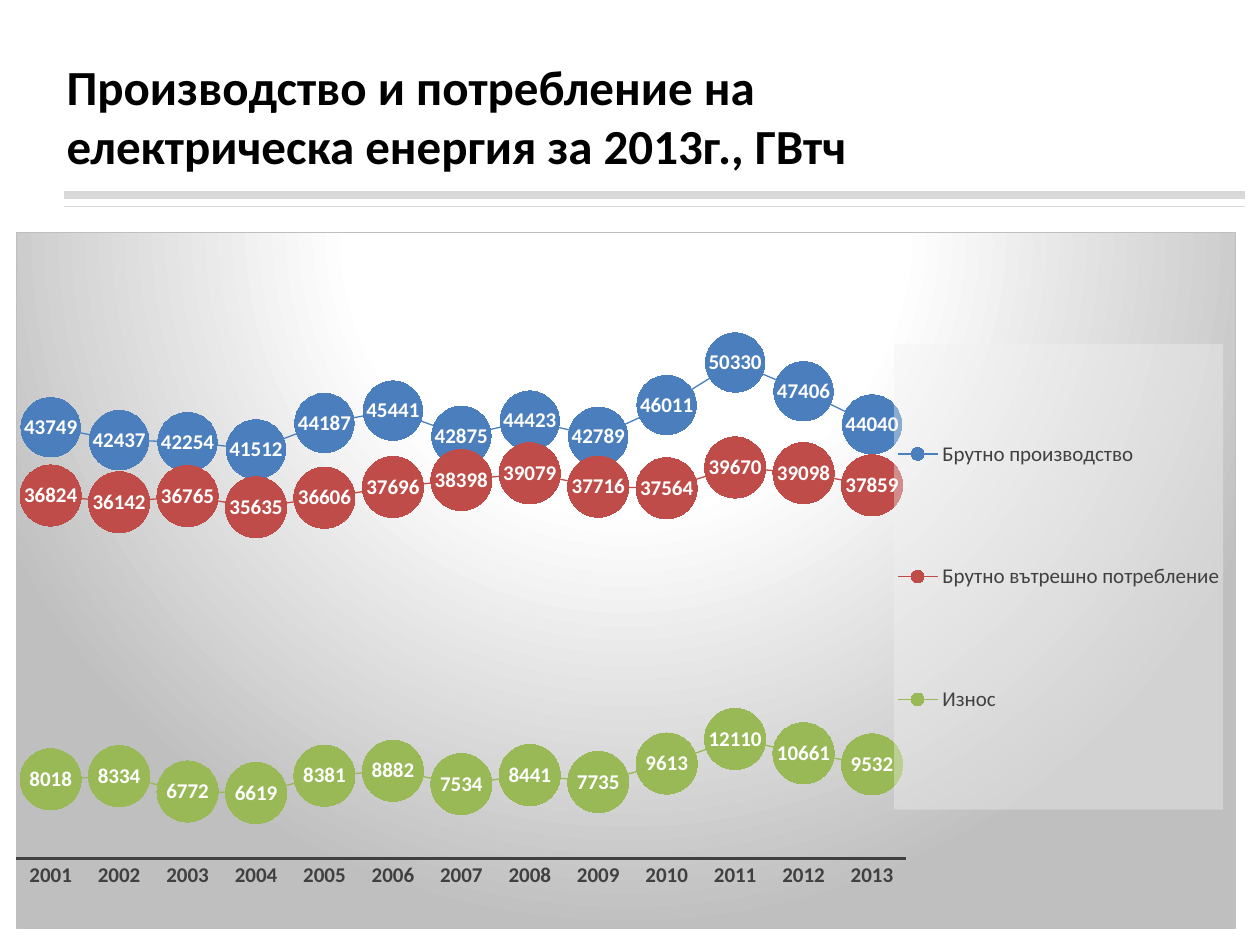
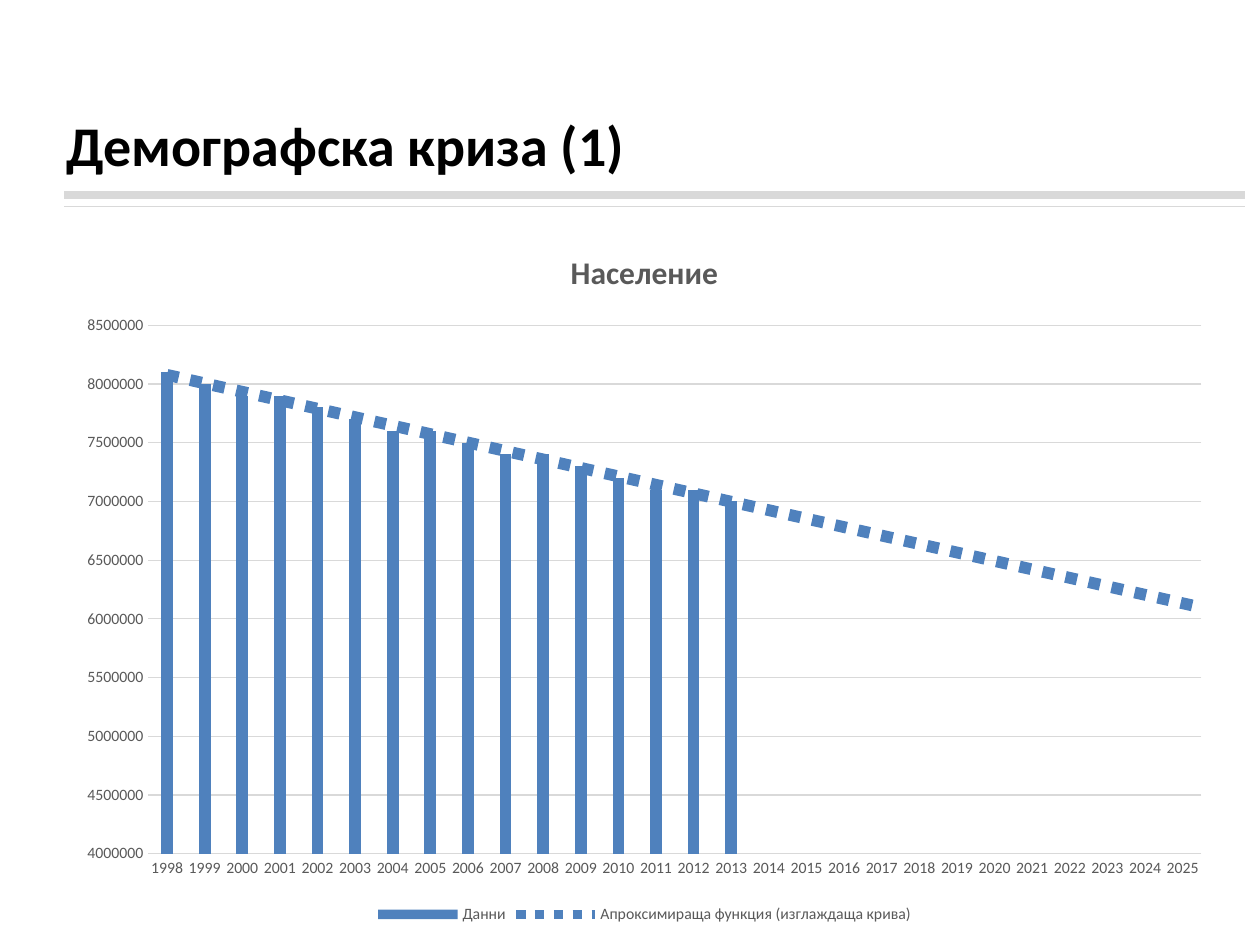
from dataclasses import dataclass

from lxml.etree import SubElement
from pptx import Presentation
from pptx.chart.axis import CategoryAxis
from pptx.chart.chart import Chart
from pptx.chart.data import CategoryChartData
from pptx.dml.color import RGBColor
from pptx.enum.chart import (XL_CHART_TYPE, XL_LABEL_POSITION, XL_LEGEND_POSITION,
                             XL_MARKER_STYLE, XL_TICK_MARK)
from pptx.enum.shapes import MSO_CONNECTOR
from pptx.enum.text import MSO_ANCHOR
from pptx.oxml import parse_xml
from pptx.oxml.ns import nsdecls, qn
from pptx.slide import Slide
from pptx.text.text import Font
from pptx.util import Inches, Length, Pt

COLUMNS, ROWS = 100, 75
SLIDE_WIDTH, SLIDE_HEIGHT = Inches(10), Inches(7.5)
FONT = "Calibri"
BLACK, WHITE = "000000", "FFFFFF"
DARK_GREY, MID_GREY, SILVER, PALE_GREY = "404040", "595959", "BFBFBF", "D9D9D9"
BLUE = "4F81BD"


@dataclass(frozen=True)
class Area:
    """A block of cells on the slide grid."""
    column: float
    row: float
    columns: float
    rows: float

    def lengths(self) -> tuple[Length, Length, Length, Length]:
        return x(self.column), y(self.row), x(self.columns), y(self.rows)


@dataclass(frozen=True)
class Heading:
    text: str
    area: Area
    size: float
    anchor: MSO_ANCHOR


@dataclass(frozen=True)
class Rule:
    row: float
    weight: float


@dataclass(frozen=True)
class EnergyFlow:
    name: str
    color: str
    marker_size: int
    gwh: tuple[int, ...]


RULES = (Rule(15.5, 4.5), Rule(16.4, 0.25))
RULE_START, RULE_END = 5.1, 98.8

ENERGY_HEADING = Heading("Производство и потребление на електрическа енергия за 2013г., ГВтч",
                         Area(4.3, 5.2, 70.2, 7.9), 28, MSO_ANCHOR.MIDDLE)
ENERGY_AREA = Area(1.2, 18.4, 96.9, 55.3)
ENERGY_YEARS = range(2001, 2014)
ENERGY_FLOWS = (
    EnergyFlow("Брутно производство", "4B7EBC", 34,
               (43749, 42437, 42254, 41512, 44187, 45441, 42875, 44423, 42789,
                46011, 50330, 47406, 44040)),
    EnergyFlow("Брутно вътрешно потребление", "BF4C48", 35,
               (36824, 36142, 36765, 35635, 36606, 37696, 38398, 39079, 37716,
                37564, 39670, 39098, 37859)),
    EnergyFlow("Износ", "98B955", 35,
               (8018, 8334, 6772, 6619, 8381, 8882, 7534, 8441, 7735,
                9613, 12110, 10661, 9532)),
)

CRISIS_HEADING = Heading("Демографска криза (1)", Area(4.3, 3.6, 57.3, 11), 32,
                         MSO_ANCHOR.BOTTOM)
POPULATION_AREA = Area(5.1, 17.8, 92.1, 55.9)
POPULATION_YEARS = range(1998, 2026)
POPULATION_MILLIONS = (8.1, 8.0, 7.9, 7.9, 7.8, 7.7, 7.6, 7.6,
                       7.5, 7.4, 7.4, 7.3, 7.2, 7.1, 7.1, 7.0)


def x(columns: float) -> Length:
    return Length(round(SLIDE_WIDTH * columns / COLUMNS))


def y(rows: float) -> Length:
    return Length(round(SLIDE_HEIGHT * rows / ROWS))


def rgb(color: str) -> RGBColor:
    return RGBColor.from_string(color)


def style_font(font: Font, size: float, color: str, bold: bool = False) -> None:
    font.name, font.size, font.bold = FONT, Pt(size), bold
    font.color.rgb = rgb(color)


def style_line(line, color: str, weight: float) -> None:
    line.color.rgb = rgb(color)
    line.width = Pt(weight)


def add_headed_slide(deck: Presentation, heading: Heading) -> Slide:
    """Add a blank slide with the double rule and its heading."""
    slide = deck.slides.add_slide(deck.slide_layouts[6])
    for rule in RULES:
        stroke = slide.shapes.add_connector(MSO_CONNECTOR.STRAIGHT, x(RULE_START), y(rule.row),
                                            x(RULE_END), y(rule.row))
        style_line(stroke.line, PALE_GREY, rule.weight)
        SubElement(stroke._element.spPr, qn("a:effectLst"))
    frame = slide.shapes.add_textbox(*heading.area.lengths()).text_frame
    frame.word_wrap = True
    frame.vertical_anchor = heading.anchor
    frame.text = heading.text
    style_font(frame.paragraphs[0].runs[0].font, heading.size, BLACK, bold=True)
    return slide


def add_chart(slide: Slide, kind: XL_CHART_TYPE, area: Area, data: CategoryChartData) -> Chart:
    chart = slide.shapes.add_chart(kind, *area.lengths(), data).chart
    style_font(chart.font, 10, BLACK)
    chart.plots[0].vary_by_categories = False
    return chart


def style_years(axis: CategoryAxis, size: float, color: str, line_color: str,
                weight: float, bold: bool = False) -> None:
    axis.major_tick_mark = axis.minor_tick_mark = XL_TICK_MARK.NONE
    style_font(axis.tick_labels.font, size, color, bold)
    style_line(axis.format.line, line_color, weight)


def add_legend(chart: Chart, position: XL_LEGEND_POSITION, size: float, color: str) -> None:
    chart.has_legend = True
    chart.legend.position = position
    chart.legend.include_in_layout = False
    style_font(chart.legend.font, size, color)


def manual_layout(left: float, top: float, width: float, height: float, inner: bool = False):
    """Place a chart part by shares of the chart's size."""
    target = '<c:layoutTarget val="inner"/>' if inner else ""
    return parse_xml(
        f'<c:layout {nsdecls("c")}><c:manualLayout>{target}'
        '<c:xMode val="edge"/><c:yMode val="edge"/>'
        f'<c:x val="{left}"/><c:y val="{top}"/><c:w val="{width}"/><c:h val="{height}"/>'
        '</c:manualLayout></c:layout>')


def drop_layout(part) -> None:
    for layout in part.findall(qn("c:layout")):
        part.remove(layout)


def paint_energy_background(chart: Chart) -> None:
    stops = "".join(f'<a:gs pos="{share * 1000}"><a:srgbClr val="{color}"/></a:gs>'
                    for share, color in ((0, WHITE), (39, WHITE), (100, SILVER)))
    chart.element.find(qn("c:chart")).addnext(parse_xml(
        f'<c:spPr {nsdecls("c", "a")}><a:gradFill><a:gsLst>{stops}</a:gsLst>'
        '<a:path path="circle"><a:fillToRect l="50000" t="-80000" r="50000" b="180000"/></a:path>'
        f'</a:gradFill><a:ln w="{Pt(0.75)}"><a:solidFill><a:srgbClr val="{SILVER}"/></a:solidFill>'
        '</a:ln></c:spPr>'))


def place_energy_parts(chart: Chart) -> None:
    """Fix the plot on the left and a translucent legend panel on the right."""
    plot_area = chart.element.find(".//" + qn("c:plotArea"))
    drop_layout(plot_area)
    plot_area.insert(0, manual_layout(0, 0.05, 0.73, 0.85, inner=True))
    legend = chart.element.find(".//" + qn("c:legend"))
    drop_layout(legend)
    overlay = legend.find(qn("c:overlay"))
    overlay.addprevious(manual_layout(0.72, 0.16, 0.27, 0.67))
    overlay.addnext(parse_xml(
        f'<c:spPr {nsdecls("c", "a")}><a:solidFill><a:srgbClr val="F2F2F2">'
        '<a:alpha val="39000"/></a:srgbClr></a:solidFill></c:spPr>'))


def build_energy_slide(deck: Presentation) -> None:
    slide = add_headed_slide(deck, ENERGY_HEADING)
    data = CategoryChartData()
    data.categories = [str(year) for year in ENERGY_YEARS]
    for flow in ENERGY_FLOWS:
        data.add_series(flow.name, flow.gwh)
    chart = add_chart(slide, XL_CHART_TYPE.LINE_MARKERS, ENERGY_AREA, data)
    chart.has_title = False
    style_years(chart.category_axis, 12, DARK_GREY, DARK_GREY, 1.5, bold=True)
    chart.value_axis.visible = False
    chart.value_axis.has_major_gridlines = False
    chart.value_axis.minimum_scale, chart.value_axis.maximum_scale = 0, 60000
    for flow, series in zip(ENERGY_FLOWS, chart.plots[0].series):
        series.smooth = False
        style_line(series.format.line, flow.color, 0.75)
        series.marker.style = XL_MARKER_STYLE.CIRCLE
        series.marker.size = flow.marker_size
        series.marker.format.fill.solid()
        series.marker.format.fill.fore_color.rgb = rgb(flow.color)
        series.marker.format.line.fill.background()
        labels = series.data_labels
        labels.show_value = True
        labels.position = XL_LABEL_POSITION.CENTER
        style_font(labels.font, 12, WHITE, bold=True)
    add_legend(chart, XL_LEGEND_POSITION.RIGHT, 12, DARK_GREY)
    paint_energy_background(chart)
    place_energy_parts(chart)


def add_population_trend(chart: Chart, years_ahead: int) -> None:
    chart.element.find(".//" + qn("c:cat")).addprevious(parse_xml(
        f'<c:trendline {nsdecls("c", "a")}>'
        '<c:name>Апроксимираща функция (изглаждаща крива)</c:name>'
        f'<c:spPr><a:ln w="{Pt(6.75)}"><a:solidFill><a:srgbClr val="{BLUE}"/></a:solidFill>'
        '<a:prstDash val="sysDot"/></a:ln></c:spPr><c:trendlineType val="linear"/>'
        f'<c:forward val="{years_ahead}"/><c:dispRSqr val="0"/><c:dispEq val="0"/>'
        '</c:trendline>'))


def build_population_slide(deck: Presentation) -> None:
    slide = add_headed_slide(deck, CRISIS_HEADING)
    years_ahead = len(POPULATION_YEARS) - len(POPULATION_MILLIONS)
    data = CategoryChartData()
    data.categories = [str(year) for year in POPULATION_YEARS]
    people = [round(millions * 1_000_000) for millions in POPULATION_MILLIONS]
    data.add_series("Данни", people + [None] * years_ahead)
    chart = add_chart(slide, XL_CHART_TYPE.COLUMN_CLUSTERED, POPULATION_AREA, data)
    chart.has_title = True
    title = chart.chart_title.text_frame
    title.text = "Население"
    style_font(title.paragraphs[0].runs[0].font, 18, MID_GREY, bold=True)
    style_years(chart.category_axis, 9, MID_GREY, PALE_GREY, 0.75)
    scale = chart.value_axis
    scale.minimum_scale, scale.maximum_scale = 4_000_000, 8_500_000
    scale.major_unit = 500_000
    scale.major_tick_mark = scale.minor_tick_mark = XL_TICK_MARK.NONE
    style_font(scale.tick_labels.font, 9, MID_GREY)
    scale.format.line.fill.background()
    style_line(scale.major_gridlines.format.line, PALE_GREY, 0.75)
    columns = chart.plots[0]
    columns.gap_width, columns.overlap = 219, -27
    population = columns.series[0]
    population.invert_if_negative = False
    population.format.fill.solid()
    population.format.fill.fore_color.rgb = rgb(BLUE)
    add_population_trend(chart, years_ahead)
    add_legend(chart, XL_LEGEND_POSITION.BOTTOM, 9, MID_GREY)


def main() -> None:
    deck = Presentation()
    deck.slide_width, deck.slide_height = SLIDE_WIDTH, SLIDE_HEIGHT
    build_energy_slide(deck)
    build_population_slide(deck)
    deck.save("out.pptx")


if __name__ == "__main__":
    main()
